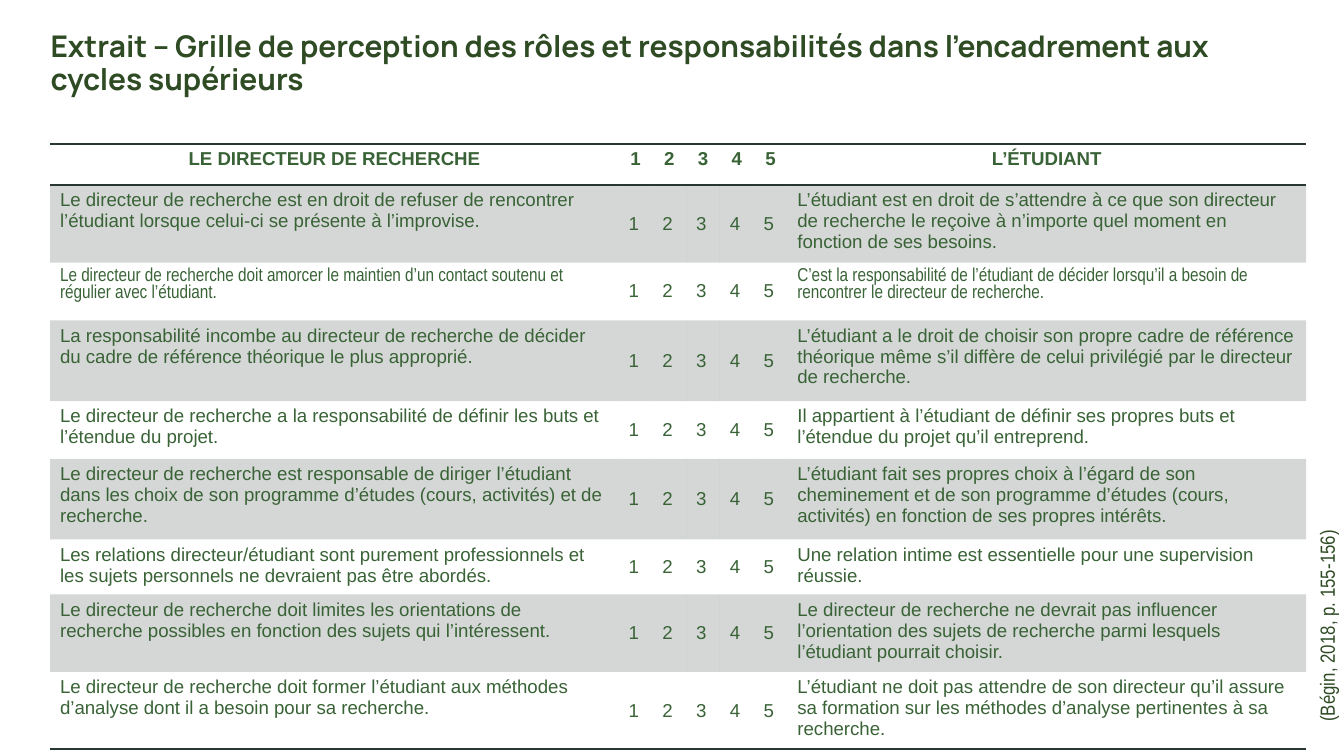
from lxml import etree
from pptx import Presentation
from pptx.dml.color import RGBColor
from pptx.enum.text import MSO_ANCHOR, PP_ALIGN
from pptx.oxml.ns import qn
from pptx.util import Pt

TOP, MIDDLE = MSO_ANCHOR.TOP, MSO_ANCHOR.MIDDLE
LEFT, CENTER = PP_ALIGN.LEFT, PP_ALIGN.CENTER

COLORS = {"title": "2E4B24", "text": "396336", "rule": "283730"}
NO_STYLE = "{2D5ABB26-0587-4C30-8999-92F81FD0307C}"
BAND_ALPHA = 20000
RULE_WIDTH = 1
INSET_X, INSET_Y = 5.4, 2.7

TITLE = ("Extrait – Grille de perception des rôles et responsabilités "
         "dans l’encadrement aux cycles supérieurs")
SOURCE = "(Bégin, 2018, p. 155-156)"
SCALE = ["1", "2", "3", "4", "5"]
HEADERS = ("LE DIRECTEUR DE RECHERCHE", "L’ÉTUDIANT")
STATEMENTS = [
    ("Le directeur de recherche est en droit de refuser de rencontrer l’étudiant lorsque celui-ci se présente à l’improvise.",
     "L’étudiant est en droit de s’attendre à ce que son directeur de recherche le reçoive à n’importe quel moment en fonction de ses besoins."),
    ("Le directeur de recherche doit amorcer le maintien d’un contact soutenu et régulier avec l’étudiant.",
     "C’est la responsabilité de l’étudiant de décider lorsqu’il a besoin de rencontrer le directeur de recherche."),
    ("La responsabilité incombe au directeur de recherche de décider du cadre de référence théorique le plus approprié.",
     "L’étudiant a le droit de choisir son propre cadre de référence théorique même s’il diffère de celui privilégié par le directeur de recherche."),
    ("Le directeur de recherche a la responsabilité de définir les buts et l’étendue du projet.",
     "Il appartient à l’étudiant de définir ses propres buts et l’étendue du projet qu’il entreprend."),
    ("Le directeur de recherche est responsable de diriger l’étudiant dans les choix de son programme d’études (cours, activités) et de recherche.",
     "L’étudiant fait ses propres choix à l’égard de son cheminement et de son programme d’études (cours, activités) en fonction de ses propres intérêts."),
    ("Les relations directeur/étudiant sont purement professionnels et les sujets personnels ne devraient pas être abordés.",
     "Une relation intime est essentielle pour une supervision réussie."),
    ("Le directeur de recherche doit limites les orientations de recherche possibles en fonction des sujets qui l’intéressent.",
     "Le directeur de recherche ne devrait pas influencer l’orientation des sujets de recherche parmi lesquels l’étudiant pourrait choisir."),
    ("Le directeur de recherche doit former l’étudiant aux méthodes d’analyse dont il a besoin pour sa recherche.",
     "L’étudiant ne doit pas attendre de son directeur qu’il assure sa formation sur les méthodes d’analyse pertinentes à sa recherche."),
]
NARROW_ROW = 2
ROW_HEIGHTS = [22, 39, 31, 43.2, 31, 43.2, 28, 39, 39]
SCALE_WIDTH = 18.1
LEFT_WIDTH = 304.6


def write(tf, text, size=10, font="Arial", color="text", bold=False,
          align=LEFT, spacing=None):
    p = tf.paragraphs[0]
    p.alignment = align
    if spacing:
        p.line_spacing = spacing
    r = p.add_run()
    r.text = text
    r.font.size = Pt(size)
    r.font.name = font
    r.font.bold = bold
    r.font.color.rgb = RGBColor.from_string(COLORS[color])


def set_insets(frame, x, y):
    frame.margin_left = frame.margin_right = Pt(x)
    frame.margin_top = frame.margin_bottom = Pt(y)


def shade(cell):
    cell.fill.solid()
    cell.fill.fore_color.rgb = RGBColor.from_string(COLORS["rule"])
    clr = cell._tc.tcPr.find(f"{qn('a:solidFill')}/{qn('a:srgbClr')}")
    etree.SubElement(clr, qn("a:alpha"), val=str(BAND_ALPHA))


def rule(cell, sides):
    for i, side in enumerate(sides):
        ln = etree.Element(qn(f"a:ln{side}"), w=str(Pt(RULE_WIDTH)))
        fill = etree.SubElement(ln, qn("a:solidFill"))
        etree.SubElement(fill, qn("a:srgbClr"), val=COLORS["rule"])
        cell._tc.get_or_add_tcPr().insert(i, ln)


def add_title(s, x, y, w, h):
    tf = s.shapes.add_textbox(Pt(x), Pt(y), Pt(w), Pt(h)).text_frame
    tf.word_wrap = True
    set_insets(tf, 7.2, 7.2)
    write(tf, TITLE, size=16, font="Manrope", color="title", bold=True,
          spacing=0.9)


def add_grid(s, x, y, w, h):
    rows = [(a, *SCALE, b) for a, b in [HEADERS, *STATEMENTS]]
    last_row, last_col = len(rows) - 1, len(rows[0]) - 1
    frame = s.shapes.add_table(len(rows), len(rows[0]), Pt(x), Pt(y), Pt(w), Pt(h))
    table = frame.table
    table._tbl.tblPr.find(qn("a:tableStyleId")).text = NO_STYLE
    table.horz_banding = False

    right_width = w - LEFT_WIDTH - SCALE_WIDTH * len(SCALE)
    widths = [LEFT_WIDTH, *[SCALE_WIDTH] * len(SCALE), right_width]
    for col, width in zip(table.columns, widths):
        col.width = Pt(width)

    for i, (row, height) in enumerate(zip(rows, ROW_HEIGHTS)):
        table.rows[i].height = Pt(height)
        header = i == 0
        for j, text in enumerate(row):
            cell = table.cell(i, j)
            statement = j in (0, last_col)
            set_insets(cell, INSET_X, INSET_Y)
            cell.vertical_anchor = TOP if header or statement else MIDDLE
            narrow = statement and i == NARROW_ROW
            write(cell.text_frame, text, bold=header,
                  font="Arial Narrow" if narrow else "Arial",
                  align=CENTER if header else LEFT)
            if i % 2:
                shade(cell)
            else:
                cell.fill.background()
            if header:
                rule(cell, "TB")
            elif i == last_row:
                rule(cell, "B")


def add_source(s, x, y, w, h):
    sp = s.shapes.add_textbox(Pt(x), Pt(y), Pt(w), Pt(h))
    sp.rotation = 270
    tf = sp.text_frame
    tf.word_wrap = False
    set_insets(tf, INSET_X, INSET_Y)
    write(tf, SOURCE, size=11, font="Arial Narrow", color="title")


def main():
    prs = Presentation()
    prs.slide_width, prs.slide_height = Pt(720), Pt(405)
    s = prs.slides.add_slide(prs.slide_layouts[6])
    add_title(s, 20, 10, 671, 45.5)
    add_grid(s, 26.8, 77.2, 673, sum(ROW_HEIGHTS))
    add_source(s, 654, 326, 113.5, 18.7)
    prs.save("out.pptx")


if __name__ == "__main__":
    main()
